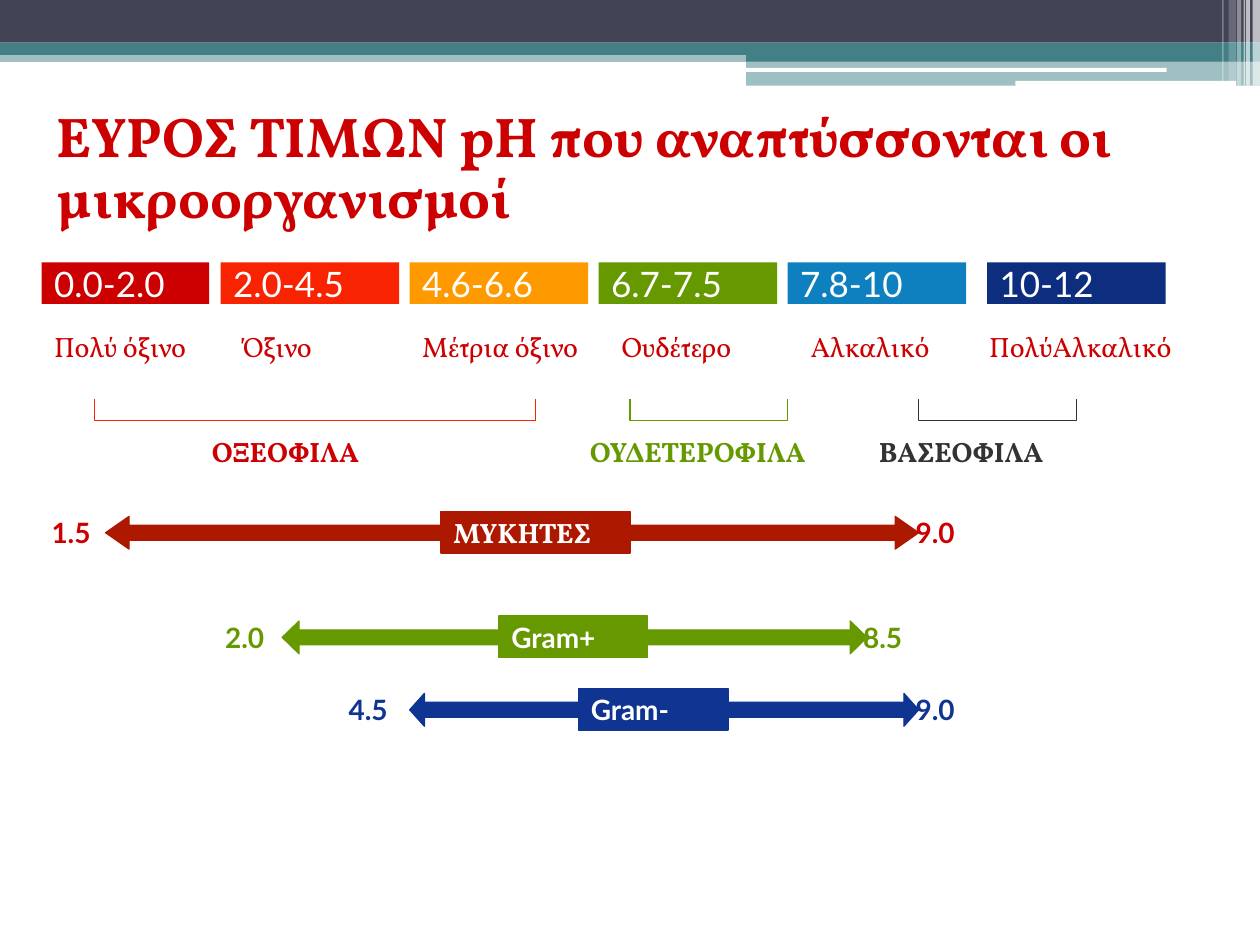
from lxml import etree
from pptx import Presentation
from pptx.dml.color import RGBColor as RGB
from pptx.enum.shapes import MSO_SHAPE as SHAPE
from pptx.enum.text import MSO_ANCHOR as ANCHOR, MSO_AUTO_SIZE as AUTO, PP_ALIGN as ALIGN
from pptx.oxml.ns import qn
from pptx.util import Cm, Pt

COLORS = {
    "white": "FFFFFF", "slate": "424456", "teal": "438086",
    "red": "CC0000", "scarlet": "F82300", "orange": "FF9900",
    "green": "669900", "sky": "0F80BF", "navy": "0D2E7F",
    "gray": "333333", "rust": "AC1900", "blue": "0F3491",
}
SERIF, SANS = "Vollkorn", "Lato"
ROW = 0.84  # height of bars and labels


def color(name):
    return RGB.from_string(COLORS[name])


def shape(slide, kind, box, fill=None, line=None, alpha=None):
    """Add a preset shape; box is left, top, width, height in cm."""
    item = slide.shapes.add_shape(kind, *map(Cm, box))
    item.shadow.inherit = False
    if fill:
        item.fill.solid()
        item.fill.fore_color.rgb = color(fill)
    else:
        item.fill.background()
    if line:
        item.line.color.rgb = color(line)
        item.line.width = Pt(0.75)
    else:
        item.line.fill.background()
    if alpha:
        tone = item.fill._xPr.find(".//" + qn("a:srgbClr"))
        etree.SubElement(tone, qn("a:alpha")).set("val", str(alpha * 1000))
    return item


def write(item, text, face, size, tint, bold=False):
    frame = item.text_frame
    frame.word_wrap = True
    frame.auto_size = AUTO.NONE
    frame.vertical_anchor = ANCHOR.MIDDLE
    para = frame.paragraphs[0]
    para.text = text
    para.alignment = ALIGN.LEFT
    font = para.font
    font.name, font.size, font.bold = face, Pt(size), bold
    font.color.rgb = color(tint)
    return para


def label(slide, x, y, width, text, face, tint, bold=False):
    item = slide.shapes.add_textbox(Cm(x), Cm(y), Cm(width), Cm(ROW))
    write(item, text, face, 16, tint, bold)


def banner(slide):
    for box, fill, alpha in (
        ((0, 1.02, 25.4, 0.23), "teal", 50),
        ((0, 0, 25.4, 0.86), "slate", None),
        ((0, 0.86, 25.4, 0.25), "teal", None),
        ((15.04, 0.99, 10.36, 0.25), "teal", None),
        ((15.04, 1.22, 10.36, 0.51), "teal", 50),
    ):
        shape(slide, SHAPE.RECTANGLE, box, fill, alpha=alpha)
    for box in ((15.01, 1.37, 8.51, 0.08), (20.47, 1.63, 4.45, 0.1)):
        shape(slide, SHAPE.ROUNDED_RECTANGLE, box, "white")
    for x, width, height, alpha in (
        (25.25, 0.15, 1.73, 65), (25.12, 0.08, 1.73, 65),
        (25.07, 0.03, 1.73, 60), (24.94, 0.08, 1.73, 40),
        (24.77, 0.15, 1.63, 20), (24.64, 0.03, 1.63, 30),
    ):
        shape(slide, SHAPE.RECTANGLE, (x, 0, width, height), "white", alpha=alpha)


def title(slide, text):
    item = slide.shapes.title
    item.left, item.top, item.width, item.height = map(Cm, (0.89, 2.13, 23.06, 2.59))
    write(item, text, SERIF, 32, "red", True).line_spacing = 0.9


def scale(slide):
    """Draw the pH bars with their names below."""
    for x, width, tint, span, left, room, name in (
        (0.84, 3.38, "red", "0.0-2.0", 0.84, 3.38, "Πολύ όξινο"),
        (4.45, 3.6, "scarlet", "2.0-4.5", 4.65, 3.38, "Όξινο"),
        (8.26, 3.6, "orange", "4.6-6.6", 8.26, 3.81, "Μέτρια όξινο"),
        (12.07, 3.6, "green", "6.7-7.5", 12.28, 3.6, "Ουδέτερο"),
        (15.88, 3.6, "sky", "7.8-10", 16.09, 3.38, "Αλκαλικό"),
        (19.9, 3.6, "navy", "10-12", 19.69, 4.66, "ΠολύΑλκαλικό"),
    ):
        bar = shape(slide, SHAPE.RECTANGLE, (x, 5.29, width, ROW), tint)
        write(bar, span, SANS, 20, "white")
        label(slide, left, 6.56, room, name, SERIF, "red")


def group(slide, x, width, line, left, room, name, tint):
    """Draw a bracket that opens upwards, with the group name below."""
    depth, middle = 0.42, 8.26
    box = (x + (width - depth) / 2, middle - width / 2, depth, width)
    item = shape(slide, SHAPE.LEFT_BRACKET, box, line=line)
    item.adjustments[0] = 0
    item.rotation = 270
    label(slide, left, 8.68, room, name, SERIF, tint, True)


def span(slide, y, ends, head, box, name, face, tint, low, high, ink):
    """Draw a double arrow with its name and both pH limits."""
    start, end = ends
    arrow = shape(slide, SHAPE.LEFT_RIGHT_ARROW, (start, y + 0.1, end - start, 0.66), tint, tint)
    arrow.adjustments[0], arrow.adjustments[1] = 0.453, head
    x, width = box
    tag = shape(slide, SHAPE.RECTANGLE, (x, y, width, ROW), tint, tint)
    write(tag, name, face, 16, "white", True)
    for (left, text), room in zip((low, high), (1.47, 1.88)):
        label(slide, left, y, room, text, SANS, ink, True)


def main():
    deck = Presentation()
    deck.slide_width, deck.slide_height = Cm(25.4), Cm(19.05)
    slide = deck.slides.add_slide(deck.slide_layouts[5])
    banner(slide)
    title(slide, "ΕΥΡΟΣ ΤΙΜΩΝ pH που αναπτύσσονται οι μικροοργανισμοί")
    scale(slide)
    group(slide, 1.91, 8.89, "scarlet", 4.02, 3.81, "ΟΞΕΟΦΙΛΑ", "red")
    group(slide, 12.7, 3.18, "green", 11.64, 5.29, "ΟΥΔΕΤΕΡΟΦΙΛΑ", "green")
    group(slide, 18.52, 3.18, "gray", 17.47, 5.29, "ΒΑΣΕΟΦΙΛΑ", "gray")
    span(slide, 10.31, (2.13, 18.52), 0.717, (8.89, 3.81), "ΜΥΚΗΤΕΣ", SERIF,
         "rust", (0.79, "1.5"), (18.21, "9.0"), "red")
    span(slide, 12.42, (5.69, 17.48), 0.515, (10.06, 3), "Gram+", SANS,
         "green", (4.29, "2.0"), (17.15, "8.5"), "green")
    span(slide, 13.88, (8.26, 18.52), 0.449, (11.66, 3.02), "Gram-", SANS,
         "blue", (6.78, "4.5"), (18.21, "9.0"), "blue")
    deck.save("out.pptx")


if __name__ == "__main__":
    main()
